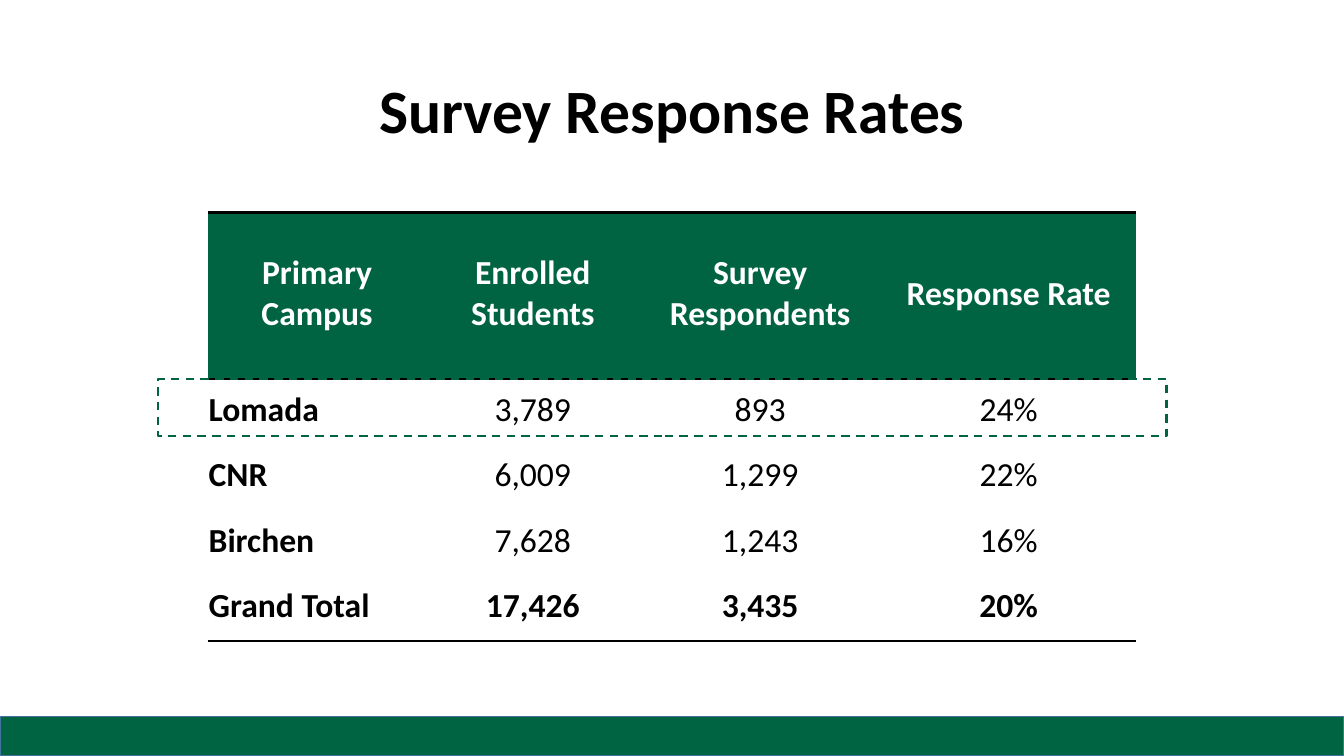
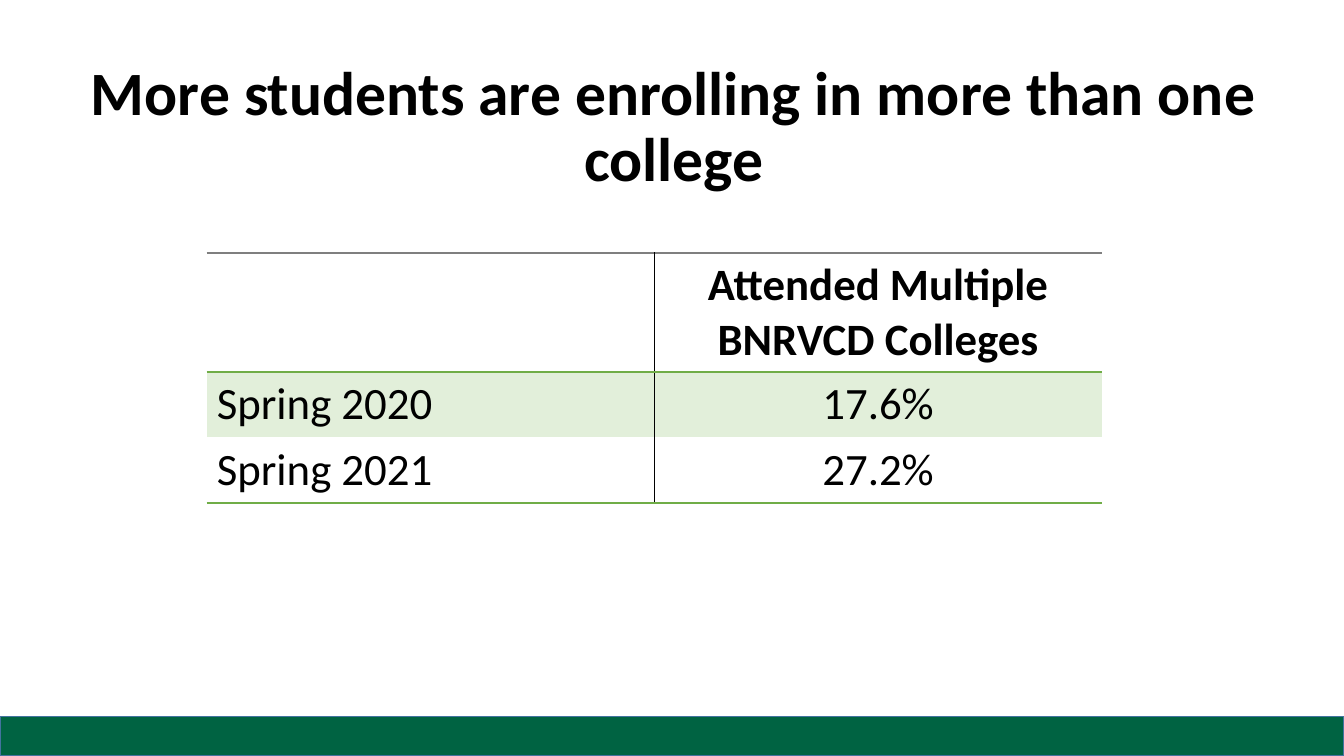
"""Build two slides of survey tables with a shared title style and footer band."""
from dataclasses import dataclass

from lxml import etree
from pptx import Presentation
from pptx.dml.color import RGBColor
from pptx.enum.dml import MSO_LINE
from pptx.enum.shapes import MSO_SHAPE
from pptx.enum.text import MSO_ANCHOR, PP_ALIGN
from pptx.oxml.ns import qn
from pptx.util import Inches, Pt

LEFT, CENTER = PP_ALIGN.LEFT, PP_ALIGN.CENTER
MIDDLE = MSO_ANCHOR.MIDDLE
RECTANGLE = MSO_SHAPE.RECTANGLE
DASH = MSO_LINE.DASH


@dataclass(frozen=True)
class Theme:
    font: str = "Calibri"
    green: str = "006342"
    band_edge: str = "43739E"
    leaf: str = "70AD47"
    pale_leaf: str = "E2EFDA"
    gray: str = "7F7F7F"
    black: str = "000000"
    white: str = "FFFFFF"
    title_size: int = 44
    rates_size: int = 24
    colleges_size: int = 32


THEME = Theme()
SLIDE_SIZE = (13.33, 7.5)
BAND_BOX = (0, 7.11, 13.33, 0.39)
BLACK_RULE = (THEME.black, 2)
LEAF_RULE = (THEME.leaf, 1)

SLIDES = [
    {
        "title": "Survey Response Rates",
        "title_box": (0.92, 0.4, 11.5, 1.45),
        "table": {
            "rows": [
                ("Primary Campus", "Enrolled Students", "Survey Respondents", "Response Rate"),
                ("Lomada", "3,789", "893", "24%"),
                ("CNR", "6,009", "1,299", "22%"),
                ("Birchen", "7,628", "1,243", "16%"),
                ("Grand Total", "17,426", "3,435", "20%"),
            ],
            "origin": (2.06, 2.11),
            "widths": (2.17, 2.11, 2.4, 2.53),
            "heights": (1.65, 0.65, 0.65, 0.65, 0.65),
            "size": THEME.rates_size,
            "fills": {0: THEME.green},
            "header_color": THEME.white,
            "bold_rows": {0, 4},
            "bold_labels": True,
            "row_rules": {0: BLACK_RULE, 1: BLACK_RULE, 5: BLACK_RULE},
            "column_rules": {},
            "insets": (0.01, 0.01, 0.01, 0.05),
        },
        "highlight_box": (1.57, 3.76, 10, 0.57),
    },
    {
        "title": "More students are enrolling in more than one college",
        "title_box": (0.13, 0.55, 13.11, 1.45),
        "table": {
            "rows": [
                ("", "Attended Multiple BNRVCD Colleges"),
                ("Spring 2020", "17.6%"),
                ("Spring 2021", "27.2%"),
            ],
            "origin": (2.05, 2.51),
            "widths": (4.44, 4.44),
            "heights": (1.18, 0.65, 0.65),
            "size": THEME.colleges_size,
            "fills": {1: THEME.pale_leaf},
            "header_color": THEME.black,
            "bold_rows": {0},
            "bold_labels": False,
            "row_rules": {0: (THEME.gray, 1), 1: LEAF_RULE, 3: LEAF_RULE},
            "column_rules": {1: (THEME.black, 1)},
            "insets": (0.1, 0.05, 0.1, 0.05),
        },
    },
]


def inches(values):
    return [Inches(value) for value in values]


def rgb(color):
    return RGBColor.from_string(color)


def apply(target, values):
    for name, value in values.items():
        setattr(target, name, value)


def write(paragraph, text, size, color, bold, align):
    paragraph.alignment = align
    run = paragraph.add_run()
    run.text = text
    apply(run.font, {"name": THEME.font, "size": Pt(size), "bold": bold})
    run.font.color.rgb = rgb(color)


def add_rectangle(slide, box, fill, edge, width, dash=None):
    rectangle = slide.shapes.add_shape(RECTANGLE, *inches(box))
    rectangle.shadow.inherit = False
    if fill:
        rectangle.fill.solid()
        rectangle.fill.fore_color.rgb = rgb(fill)
    else:
        rectangle.fill.background()
    rectangle.line.color.rgb = rgb(edge)
    apply(rectangle.line, {"width": Pt(width), "dash_style": dash})


def add_title(slide, text, box):
    frame = slide.shapes.add_textbox(*inches(box)).text_frame
    apply(frame, {"word_wrap": True, "vertical_anchor": MIDDLE})
    heading = frame.paragraphs[0]
    heading.line_spacing = 0.9
    write(heading, text, THEME.title_size, THEME.black, True, CENTER)


def set_borders(cell, rules):
    properties = cell._tc.get_or_add_tcPr()
    for side, rule in rules.items():
        border = etree.SubElement(properties, qn(f"a:ln{side}"))
        if rule:
            color, width = rule
            border.set("w", str(Pt(width)))
            fill = etree.SubElement(border, qn("a:solidFill"))
            etree.SubElement(fill, qn("a:srgbClr")).set("val", color)
        else:
            etree.SubElement(border, qn("a:noFill"))


def fill_cell(cell, text, row, column, data):
    sides = ("margin_left", "margin_top", "margin_right", "margin_bottom")
    apply(cell, dict(zip(sides, inches(data["insets"]))))
    cell.vertical_anchor = MIDDLE
    across, down = data["row_rules"], data["column_rules"]
    set_borders(cell, {
        "L": down.get(column), "R": down.get(column + 1),
        "T": across.get(row), "B": across.get(row + 1),
    })
    cell.fill.solid()
    cell.fill.fore_color.rgb = rgb(data["fills"].get(row, THEME.white))
    if text:
        is_label = row > 0 and column == 0
        color = THEME.black if row else data["header_color"]
        bold = row in data["bold_rows"] or (is_label and data["bold_labels"])
        write(cell.text_frame.paragraphs[0], text, data["size"], color, bold,
              LEFT if is_label else CENTER)


def add_data_table(slide, data):
    widths, heights = data["widths"], data["heights"]
    box = (*data["origin"], sum(widths), sum(heights))
    table = slide.shapes.add_table(len(heights), len(widths), *inches(box)).table
    apply(table, {"first_row": False, "horz_banding": False})
    for column, width in zip(table.columns, inches(widths)):
        column.width = width
    for row, height in zip(table.rows, inches(heights)):
        row.height = height
    for row, texts in enumerate(data["rows"]):
        for column, text in enumerate(texts):
            fill_cell(table.cell(row, column), text, row, column, data)


def main():
    deck = Presentation()
    deck.slide_width, deck.slide_height = inches(SLIDE_SIZE)
    blank = deck.slide_layouts[6]
    for content in SLIDES:
        slide = deck.slides.add_slide(blank)
        add_rectangle(slide, BAND_BOX, THEME.green, THEME.band_edge, 1)
        add_title(slide, content["title"], content["title_box"])
        add_data_table(slide, content["table"])
        if "highlight_box" in content:
            add_rectangle(slide, content["highlight_box"], None, THEME.green, 1.5, DASH)
    deck.save("out.pptx")


if __name__ == "__main__":
    main()
